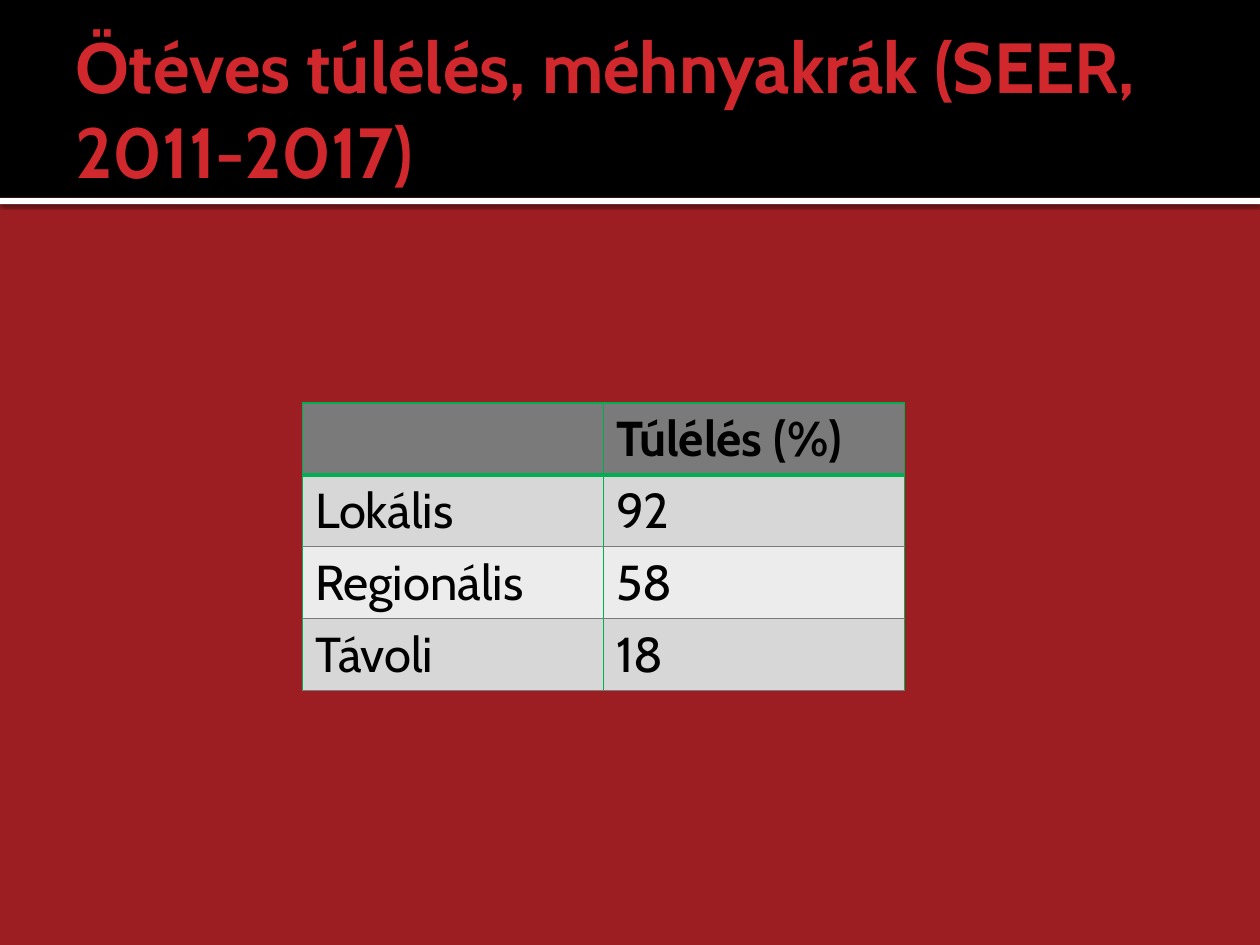
from lxml.etree import SubElement
from pptx import Presentation
from pptx.dml.color import RGBColor
from pptx.enum.shapes import MSO_SHAPE
from pptx.enum.text import MSO_ANCHOR
from pptx.oxml.ns import qn
from pptx.util import Inches, Pt

RED = RGBColor(0x9D, 0x1E, 0x22)
TITLE_RED = RGBColor(0xD1, 0x28, 0x2E)
BLACK = RGBColor(0, 0, 0)
WHITE = RGBColor(0xFF, 0xFF, 0xFF)
GREEN = RGBColor(0x00, 0xB0, 0x50)
GRAY = RGBColor(0x7A, 0x7A, 0x7A)
BANDS = [RGBColor(0xD7, 0xD7, 0xD7), RGBColor(0xEC, 0xEC, 0xEC)]
FONT = "Cabin"
BAND_H = 1.57
COL_W, ROW_H = 2.39, 0.57
ROWS = [("", "Túlélés (%)"), ("Lokális", "92"), ("Regionális", "58"), ("Távoli", "18")]


def style(font, size, color, bold):
    font.name, font.size, font.bold = FONT, Pt(size), bold
    font.color.rgb = color


def add_border(cell, side, color, width):
    """Draw one cell edge; side is L, R, T or B, added in that order."""
    ln = SubElement(cell._tc.get_or_add_tcPr(), qn(f"a:ln{side}"), w=str(Pt(width)))
    fill = SubElement(ln, qn("a:solidFill"))
    SubElement(fill, qn("a:srgbClr"), val=str(color))


prs = Presentation()
prs.slide_width, prs.slide_height = Inches(10), Inches(7.5)
s = prs.slides.add_slide(prs.slide_layouts[6])
s.background.fill.solid()
s.background.fill.fore_color.rgb = RED

# Title band with a white rule under it
for top, height, color in [(BAND_H, 0.05, WHITE), (0, BAND_H, BLACK)]:
    sp = s.shapes.add_shape(MSO_SHAPE.RECTANGLE, 0, Inches(top), prs.slide_width, Inches(height))
    sp.shadow.inherit = False
    sp.fill.solid()
    sp.fill.fore_color.rgb = color
    sp.line.fill.background()
    if color == WHITE:
        effects = sp._element.spPr.find(qn("a:effectLst"))
        shadow = SubElement(effects, qn("a:outerShdw"), blurRad=str(Pt(2.5)),
                            dist=str(Pt(0.8)), dir="5400000", rotWithShape="0")
        shade = SubElement(shadow, qn("a:srgbClr"), val=str(BLACK))
        SubElement(shade, qn("a:alpha"), val="60000")

title = s.shapes.add_textbox(Inches(0.5), Inches(0.17), Inches(9), Inches(1.37))
tf = title.text_frame
tf.word_wrap = True
tf.vertical_anchor = MSO_ANCHOR.MIDDLE
tf.margin_left, tf.margin_right = Inches(0.1), Inches(0.05)
tf.text = "Ötéves túlélés, méhnyakrák (SEER, 2011-2017)"
style(tf.paragraphs[0].runs[0].font, 40.5, TITLE_RED, True)

# Survival table
table = s.shapes.add_table(len(ROWS), 2, Inches(2.4), Inches(3.2),
                           Inches(2 * COL_W), Inches(len(ROWS) * ROW_H)).table
for col in table.columns:
    col.width = Inches(COL_W)
for i, values in enumerate(ROWS):
    table.rows[i].height = Inches(ROW_H)
    header = i == 0
    above = [(GREEN, 1), (GREEN, 3)][i] if i < 2 else (GRAY, 0.5)
    below = (GREEN, 3) if header else (GRAY, 0.5)
    for j, value in enumerate(values):
        cell = table.cell(i, j)
        for side, edge in zip("LRTB", [(GREEN, 1), (GREEN, 1), above, below]):
            add_border(cell, side, *edge)
        cell.fill.solid()
        cell.fill.fore_color.rgb = GRAY if header else BANDS[(i - 1) % 2]
        cell.text_frame.text = value
        style(cell.text_frame.paragraphs[0].font, 28, BLACK, header)
        for r in cell.text_frame.paragraphs[0].runs:
            style(r.font, 28, BLACK, header)

prs.save("out.pptx")
